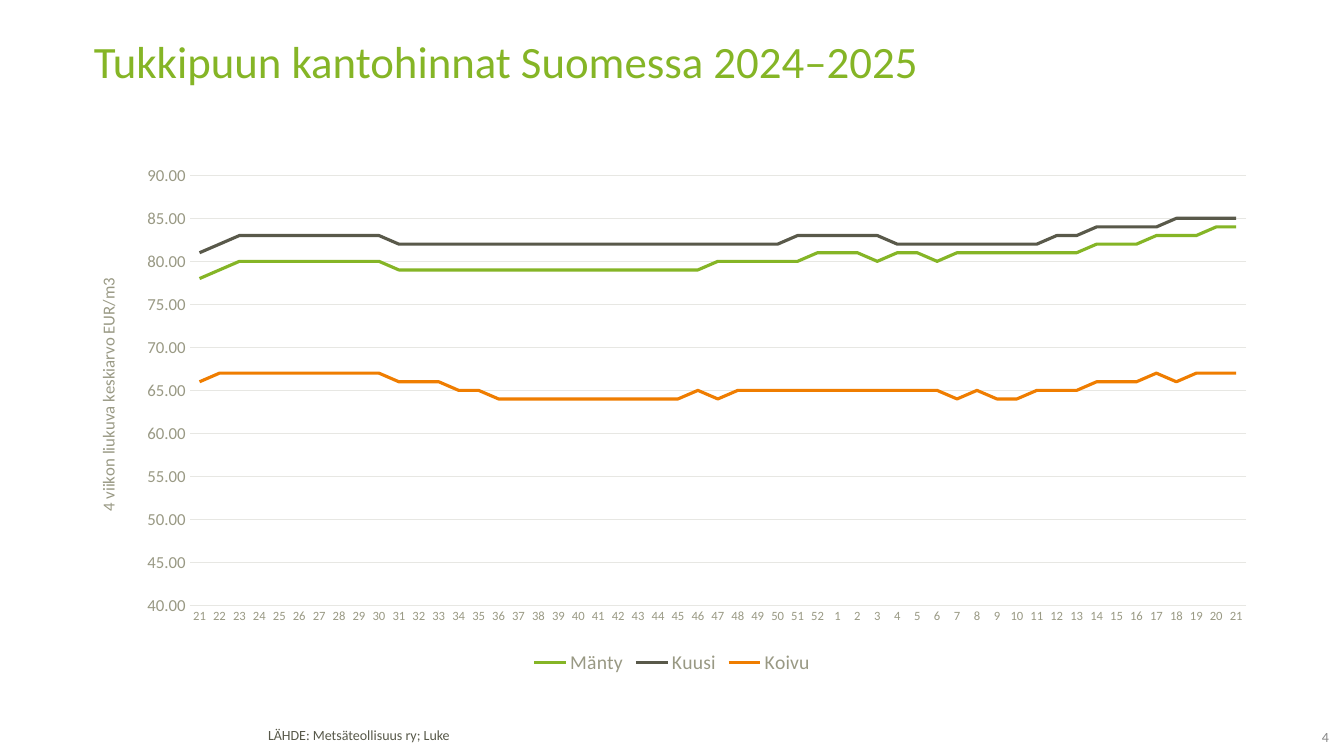
from pptx import Presentation
from pptx.chart.data import CategoryChartData
from pptx.dml.color import RGBColor
from pptx.enum.chart import XL_CHART_TYPE as ChartType, XL_LEGEND_POSITION as LegendPosition, XL_TICK_MARK as TickMark
from pptx.enum.text import MSO_ANCHOR as Anchor, PP_ALIGN as Align
from pptx.oxml import parse_xml
from pptx.oxml.ns import nsdecls
from pptx.util import Inches, Pt

TITLE = "Tukkipuun kantohinnat Suomessa 2024–2025"
SOURCE = "LÄHDE: Metsäteollisuus ry; Luke"
PAGE_NUMBER = "4"
AXIS_TITLE = "4 viikon liukuva keskiarvo EUR/m3"
WEEKS = [str(week) for week in (*range(21, 53), *range(1, 22))]
PRICES = {
    "Mänty": [
        78, 79, 80, 80, 80, 80, 80, 80, 80, 80, 79, 79, 79, 79, 79, 79, 79, 79,
        79, 79, 79, 79, 79, 79, 79, 79, 80, 80, 80, 80, 80, 81, 81, 81, 80, 81,
        81, 80, 81, 81, 81, 81, 81, 81, 81, 82, 82, 82, 83, 83, 83, 84, 84],
    "Kuusi": [
        81, 82, 83, 83, 83, 83, 83, 83, 83, 83, 82, 82, 82, 82, 82, 82, 82, 82,
        82, 82, 82, 82, 82, 82, 82, 82, 82, 82, 82, 82, 83, 83, 83, 83, 83, 82,
        82, 82, 82, 82, 82, 82, 82, 83, 83, 84, 84, 84, 84, 85, 85, 85, 85],
    "Koivu": [
        66, 67, 67, 67, 67, 67, 67, 67, 67, 67, 66, 66, 66, 65, 65, 64, 64, 64,
        64, 64, 64, 64, 64, 64, 64, 65, 64, 65, 65, 65, 65, 65, 65, 65, 65, 65,
        65, 65, 64, 65, 64, 64, 65, 65, 65, 66, 66, 66, 67, 66, 67, 67, 67],
}
PLOT_SHARES = {"x": 0.09, "y": 0.033, "w": 0.898, "h": 0.827}
THEME = {
    "font": "Calibri",
    "series": {"Mänty": "85B526", "Kuusi": "59594A", "Koivu": "EF7D00"},
    "grid": "E7E7E3",
    "text": {
        "title": (32, "85B526"), "source": (10, "58594A"), "number": (10, "878787"),
        "chart": (10, "59594A"), "weeks": (9, "999984"), "prices": (12, "999984"),
        "legend": (14, "999984"),
    },
}
WIDTH, HEIGHT = Inches(13.33), Inches(7.5)
MARGIN = Inches(0.83)
CONTENT_WIDTH = WIDTH - 2 * MARGIN


def assign(target, values):
    for name, value in values.items():
        setattr(target, name, value)


def style_font(font, role):
    size, color = THEME["text"][role]
    assign(font, {"name": THEME["font"], "size": Pt(size), "bold": False})
    font.color.rgb = RGBColor.from_string(color)


def style_line(line, color, width):
    line.width = Pt(width)
    line.color.rgb = RGBColor.from_string(color)


def write(box, text, role, frame_format, para_format):
    assign(box.text_frame, {"word_wrap": True, **frame_format})
    para = box.text_frame.paragraphs[0]
    assign(para, para_format)
    span = para.add_run()
    span.text = text
    style_font(span.font, role)


def add_price_chart(page):
    data = CategoryChartData(number_format="#,##0.00")
    data.categories = WEEKS
    for name, prices in PRICES.items():
        data.add_series(name, prices)
    chart = page.shapes.add_chart(
        ChartType.LINE, MARGIN, Inches(1.57), CONTENT_WIDTH, Inches(5.16), data).chart
    assign(chart, {"has_title": False, "has_legend": True})
    style_font(chart.font, "chart")
    assign(chart.legend, {"position": LegendPosition.BOTTOM, "include_in_layout": False})
    style_font(chart.legend.font, "legend")

    plot = chart.plots[0]
    plot.vary_by_categories = False
    for series in plot.series:
        series.smooth = False
        style_line(series.format.line, THEME["series"][series.name], 2.25)

    for axis, role in ((chart.category_axis, "weeks"), (chart.value_axis, "prices")):
        assign(axis, {"major_tick_mark": TickMark.NONE, "minor_tick_mark": TickMark.NONE})
        style_font(axis.tick_labels.font, role)
    style_line(chart.category_axis.format.line, THEME["grid"], 0.75)

    price_axis = chart.value_axis
    assign(price_axis, {"minimum_scale": 40, "maximum_scale": 90, "major_unit": 5,
                        "has_major_gridlines": True})
    assign(price_axis.tick_labels, {"number_format": "#,##0.00", "number_format_is_linked": False})
    price_axis.format.line.fill.background()
    style_line(price_axis.major_gridlines.format.line, THEME["grid"], 0.75)
    span = price_axis.axis_title.text_frame.paragraphs[0].add_run()
    span.text = AXIS_TITLE
    style_font(span.font, "prices")

    modes = "".join(f'<c:{key}Mode val="edge"/>' for key in "xy")
    shares = "".join(f'<c:{key} val="{share}"/>' for key, share in PLOT_SHARES.items())
    plot_area = chart.element.chart.plotArea
    for layout in plot_area.findall("{*}layout"):
        plot_area.remove(layout)
    plot_area.insert(0, parse_xml(
        f'<c:layout {nsdecls("c")}><c:manualLayout><c:layoutTarget val="inner"/>'
        f'{modes}{shares}</c:manualLayout></c:layout>'))


def main():
    deck = Presentation()
    assign(deck, {"slide_width": WIDTH, "slide_height": HEIGHT})
    page = deck.slides.add_slide(deck.slide_layouts[5])

    title = page.shapes.title
    assign(title, {"left": MARGIN, "top": Inches(0.39),
                   "width": CONTENT_WIDTH, "height": Inches(0.98)})
    write(title, TITLE, "title", {"vertical_anchor": Anchor.TOP},
          {"alignment": Align.LEFT, "line_spacing": 0.8})

    add_price_chart(page)

    source = page.shapes.add_textbox(Inches(2.56), Inches(7.18), Inches(7.18), Inches(0.27))
    write(source, SOURCE, "source", {}, {"line_spacing": 0.85})
    number = page.shapes.add_textbox(Inches(12.65), Inches(7.24), Inches(0.53), Inches(0.19))
    write(number, PAGE_NUMBER, "number",
          {"vertical_anchor": Anchor.MIDDLE, "margin_left": 0, "margin_right": 0,
           "margin_top": 0, "margin_bottom": Inches(0.04)},
          {"alignment": Align.RIGHT})
    deck.save("out.pptx")


if __name__ == "__main__":
    main()
